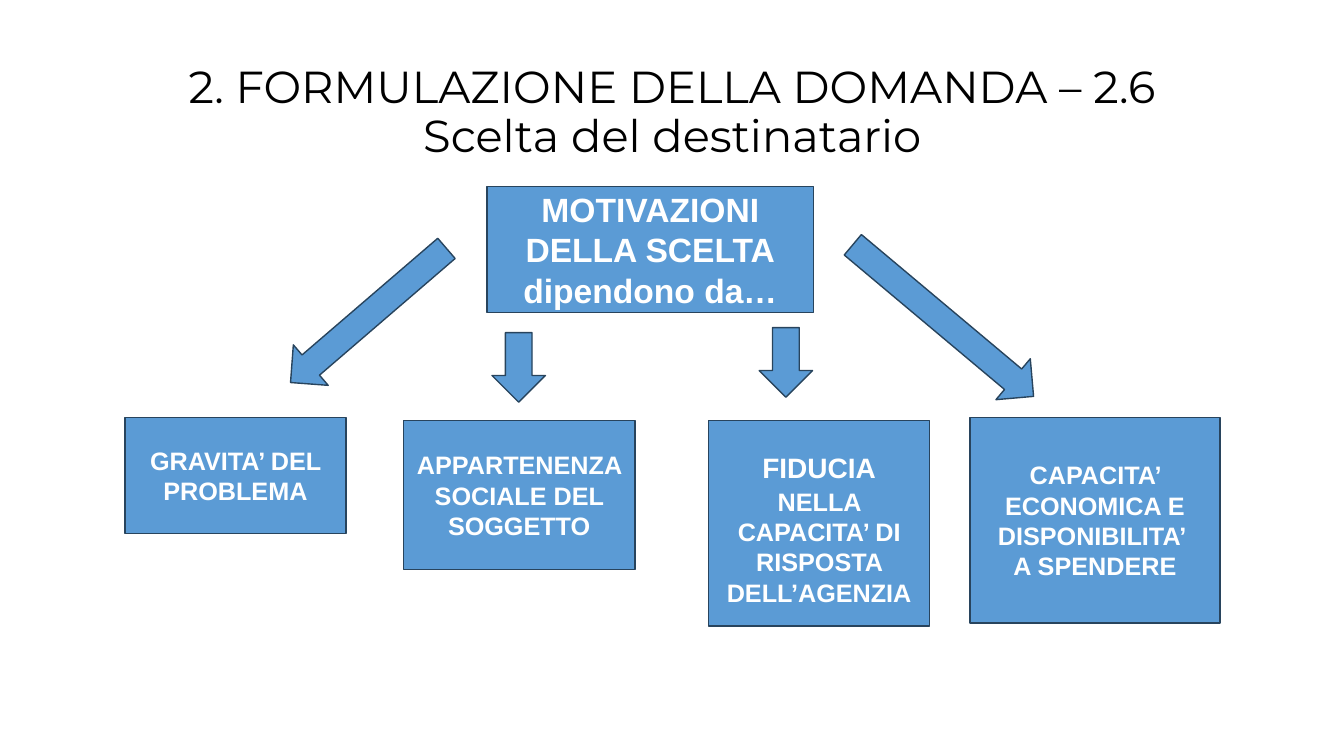
from pptx import Presentation
from pptx.dml.color import RGBColor
from pptx.enum.shapes import MSO_SHAPE as Shape
from pptx.enum.text import MSO_ANCHOR as Anchor, PP_ALIGN as Align
from pptx.util import Inches, Pt

COLORS = {"fill": "5B9BD5", "line": "28445D", "light": "FFFFFF", "dark": "000000"}
TITLE = "2. FORMULAZIONE DELLA DOMANDA – 2.6\vScelta del destinatario"
TITLE_FONT = {"name": "Montserrat", "size": Pt(32), "bold": False}
BOX_FONT = {"name": "Arial", "bold": True}

# Each box holds paragraphs, each paragraph a list of (text, size) runs.
ROOT = [[("MOTIVAZIONI", 24)], [("DELLA SCELTA", 24)], [("dipendono da…", 24)]]
REASONS = [
    ((0, 0, 2.19, 1.15), [[("GRAVITA’ DEL PROBLEMA", 18)]]),
    ((2.76, 0.03, 2.3, 1.48), [[("APPARTENENZA SOCIALE DEL SOGGETTO", 18)]]),
    ((5.79, 0.03, 2.19, 2.04),
     [[("FIDUCIA", 20), (" ", 28), ("NELLA CAPACITA’ DI RISPOSTA DELL’AGENZIA", 18)]]),
    ((8.38, 0, 2.48, 2.04),
     [[("CAPACITA’ ECONOMICA E DISPONIBILITA’ ", 18)], [("A SPENDERE", 18)]]),
]
ARROW_WIDTH = 0.53
ARROWS = [  # left, top, length, rotation
    (2.15, 0.26, 2.04, 49.3),
    (3.64, 1.45, 0.69, 0),
    (6.29, 1.4, 0.69, 0),
    (7.85, 0.16, 2.34, 310),
]


def color(key):
    return RGBColor.from_string(COLORS[key])


def style_font(font, values, key):
    for name, value in values.items():
        setattr(font, name, value)
    font.color.rgb = color(key)


def add_blue_shape(s, kind, left, top, width, height):
    sp = s.shapes.add_shape(kind, *map(Inches, (left, top, width, height)))
    sp.shadow.inherit = False
    sp.fill.solid()
    sp.fill.fore_color.rgb = color("fill")
    sp.line.color.rgb = color("line")
    sp.line.width = Pt(1)
    return sp


def add_box(s, left, top, width, height, paragraphs):
    tf = add_blue_shape(s, Shape.RECTANGLE, left, top, width, height).text_frame
    tf.word_wrap = True
    tf.vertical_anchor = Anchor.MIDDLE
    for i, runs in enumerate(paragraphs):
        p = tf.add_paragraph() if i else tf.paragraphs[0]
        p.alignment = Align.CENTER
        for text, size in runs:
            r = p.add_run()
            r.text = text
            style_font(r.font, {**BOX_FONT, "size": Pt(size)}, "light")


def add_title(s, left, top, width, height):
    tf = s.shapes.add_textbox(*map(Inches, (left, top, width, height))).text_frame
    tf.word_wrap = True
    tf.vertical_anchor = Anchor.MIDDLE
    p = tf.paragraphs[0]
    p.text = TITLE
    p.alignment = Align.CENTER
    p.line_spacing = 0.9
    style_font(p.font, TITLE_FONT, "dark")
    for r in p.runs:
        style_font(r.font, TITLE_FONT, "dark")


def add_reasons(s, left, top):
    for (x, y, width, height), paragraphs in REASONS:
        add_box(s, left + x, top + y, width, height, paragraphs)


def add_arrows(s, left, top):
    for x, y, length, rotation in ARROWS:
        sp = add_blue_shape(s, Shape.DOWN_ARROW, left + x, top + y, ARROW_WIDTH, length)
        sp.rotation = rotation


def add_diagram(s, left, top):
    """Place the root box, the four reasons and the arrows between them."""
    add_box(s, left + 3.59, top, 3.24, 1.25, ROOT)
    add_reasons(s, left, top + 2.29)
    add_arrows(s, left, top)


def main():
    prs = Presentation()
    prs.slide_width, prs.slide_height = Inches(13.33), Inches(7.5)
    s = prs.slides.add_slide(prs.slide_layouts[6])
    add_title(s, 0.92, 0.4, 11.5, 1.45)
    add_diagram(s, 1.24, 1.85)
    prs.save("out.pptx")


if __name__ == "__main__":
    main()
